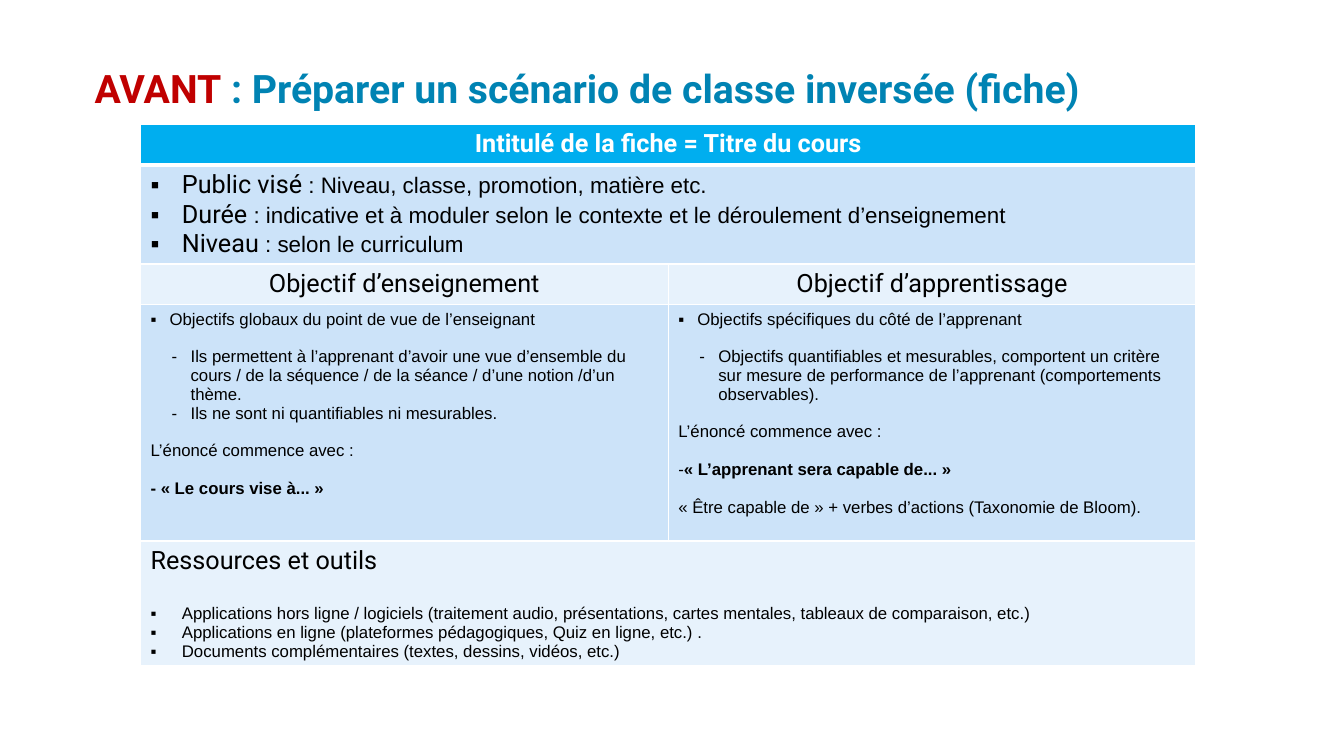
import pptx
import pptx.dml.color
import pptx.enum.text
import pptx.oxml
import pptx.oxml.ns
import pptx.util
from lxml import etree

Cm = pptx.util.Cm
Pt = pptx.util.Pt
RGBColor = pptx.dml.color.RGBColor
CENTER = pptx.enum.text.PP_ALIGN.CENTER

WHITE = RGBColor(0xFF, 0xFF, 0xFF)
BLACK = RGBColor(0, 0, 0)
RED = RGBColor(0xC0, 0, 0)
TEAL = RGBColor(0, 0x83, 0xB3)
CYAN = RGBColor(0, 0xAE, 0xEF)
SKY = RGBColor(0xCC, 0xE3, 0xF9)
PALE = RGBColor(0xE7, 0xF2, 0xFC)
HEADING, BODY = "Roboto", "Arial"
GAP, WIDE_GAP = 13.4, 20.7


class LessonSlide:
    """Holds the slide and its style, with a method for each kind of element."""

    def __init__(self, deck):
        self.slide = deck.slides.add_slide(deck.slide_layouts[5])

    def style(self, font, size, name=BODY, color=BLACK, bold=False):
        font.size, font.name, font.bold = Pt(size), name, bold
        font.color.rgb = color

    def title(self, parts):
        heading = self.slide.shapes.title
        heading.left, heading.top = Cm(2.13), Cm(1.47)
        heading.width, heading.height = Cm(29.41), Cm(1.45)
        frame = heading.text_frame
        frame.auto_size = pptx.enum.text.MSO_AUTO_SIZE.NONE
        frame.vertical_anchor = pptx.enum.text.MSO_ANCHOR.BOTTOM
        line = frame.paragraphs[0]
        line.alignment = pptx.enum.text.PP_ALIGN.LEFT
        line.line_spacing = 0.8
        for text, color in parts:
            run = line.add_run()
            run.text = text
            self.style(run.font, 28, HEADING, color, True)

    def table(self, left, top, column_width, heights):
        frame = self.slide.shapes.add_table(
            len(heights), 2, left, top, 2 * column_width, sum(heights))
        self.grid = frame.table
        self.grid.first_row = self.grid.horz_banding = False
        for row, height in zip(self.grid.rows, heights):
            row.height = height

    def borders(self, cell, row):
        for side in "LRTB":
            thick = (side, row) in (("B", 0), ("T", 1))
            edge = etree.SubElement(cell._tc.get_or_add_tcPr(),
                                    pptx.oxml.ns.qn("a:ln" + side),
                                    w=str(Pt(3 if thick else 1)))
            fill = etree.SubElement(edge, pptx.oxml.ns.qn("a:solidFill"))
            etree.SubElement(fill, pptx.oxml.ns.qn("a:srgbClr"), val=str(WHITE))

    def fill_row(self, row, color, *contents):
        cells = list(self.grid.rows[row].cells)
        if len(contents) == 1:
            cells[0].merge(cells[1])
        for cell in cells:
            self.borders(cell, row)
            cell.fill.solid()
            cell.fill.fore_color.rgb = color
        for cell, lines in zip(cells, contents):
            for index, line in enumerate(lines):
                frame = cell.text_frame
                self.line(frame.add_paragraph() if index else frame.paragraphs[0], **line)

    def line(self, paragraph, text, bullet=None, margin=0, hang=0, gap=0,
             align=None, lead=None, size=12, **look):
        if bullet:
            properties = paragraph._p.get_or_add_pPr()
            properties.set("marL", str(Cm(margin)))
            properties.set("indent", str(-Cm(hang)))
            etree.SubElement(properties, pptx.oxml.ns.qn("a:buFont"), typeface=BODY)
            etree.SubElement(properties, pptx.oxml.ns.qn("a:buChar"), char=bullet)
        if gap:
            paragraph.space_before = Pt(gap)
        paragraph.alignment = align
        if lead:
            opening, rest = paragraph.add_run(), paragraph.add_run()
            opening.text, rest.text = lead, text
            self.style(opening.font, 18, HEADING)
            self.style(rest.font, size, **look)
        else:
            paragraph.add_run().text = text
            self.style(paragraph.font, size, **look)


def heading(text, **look):
    return dict(text=text, size=18, name=HEADING, **look)


def wide_item(text, **look):
    return dict(text=text, bullet="▪", margin=0.79, hang=0.79, **look)


def item(text):
    return dict(text=text, bullet="▪", margin=0.48, hang=0.48)


def dash(text, margin=1.01, **look):
    return dict(text=text, bullet="-", margin=margin, hang=0.48, **look)


def plain(text, **look):
    return dict(text=text, gap=GAP, **look)


def main():
    deck = pptx.Presentation()
    deck.slide_width, deck.slide_height = Cm(33.87), Cm(19.05)
    lesson = LessonSlide(deck)
    lesson.title([("AVANT", RED),
                  (" : Préparer un scénario de classe inversée (fiche)", TEAL)])
    lesson.table(Cm(3.54), Cm(3.13), Cm(13.3),
                 [Cm(height) for height in (1.03, 2.47, 1.03, 5.95, 3.15)])
    lesson.fill_row(0, CYAN, [heading("Intitulé de la fiche = Titre du cours",
                                      align=CENTER, color=WHITE, bold=True)])
    lesson.fill_row(1, SKY, [
        wide_item(text, lead=lead, size=16) for lead, text in (
            ("Public visé ", ": Niveau, classe, promotion, matière etc."),
            ("Durée", " : indicative et à moduler selon le contexte et le "
                      "déroulement d’enseignement"),
            ("Niveau", " : selon le curriculum"))])
    lesson.fill_row(2, PALE, [heading("Objectif d’enseignement", align=CENTER)],
                    [heading("Objectif d’apprentissage", align=CENTER)])
    teaching = [
        item("Objectifs globaux du point de vue de l’enseignant"),
        dash("Ils permettent à l’apprenant d’avoir une vue d’ensemble du cours / de la "
             "séquence / de la séance / d’une notion /d’un thème.", gap=GAP),
        dash("Ils ne sont ni quantifiables ni mesurables."),
        plain("L’énoncé commence avec :"),
        plain("- « Le cours vise à... »", bold=True)]
    learning = [
        item("Objectifs spécifiques du côté de l’apprenant"),
        dash("Objectifs quantifiables et mesurables, comportent un critère sur mesure de "
             "performance de l’apprenant (comportements observables).", gap=GAP),
        plain("L’énoncé commence avec :"),
        dash("« L’apprenant sera capable de... »", margin=0, gap=GAP, bold=True),
        plain("« Être capable de » + verbes d’actions (Taxonomie de Bloom).")]
    lesson.fill_row(3, SKY, teaching, learning)
    lesson.fill_row(4, PALE, [
        heading("Ressources et outils"),
        wide_item("Applications hors ligne / logiciels (traitement audio, présentations, "
                  "cartes mentales, tableaux de comparaison, etc.)", gap=WIDE_GAP),
        wide_item("Applications en ligne (plateformes pédagogiques, Quiz en ligne, etc.) ."),
        wide_item("Documents complémentaires (textes, dessins, vidéos, etc.)")])
    deck.save("out.pptx")


if __name__ == "__main__":
    main()
